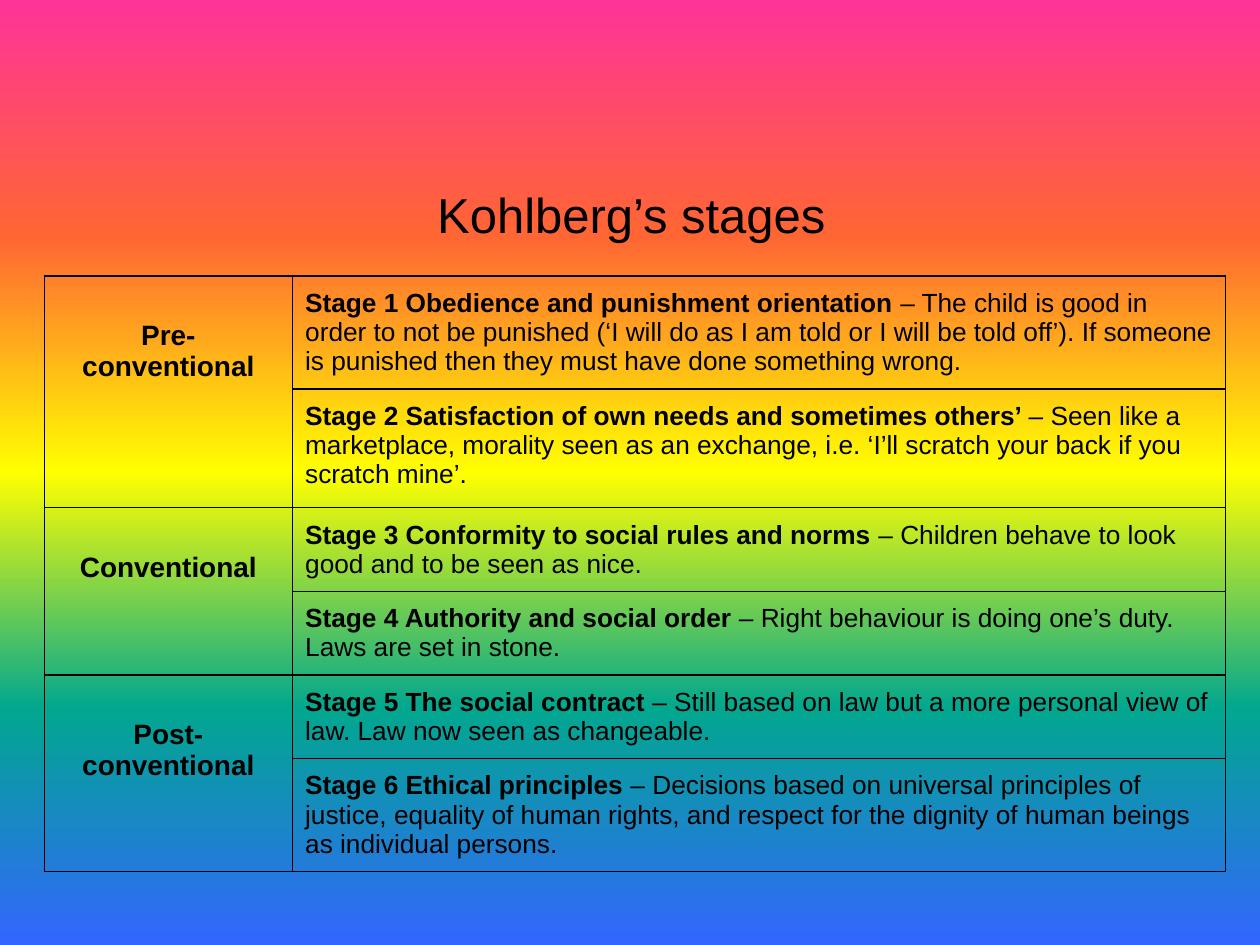
from pptx import Presentation
from pptx.dml.color import RGBColor
from pptx.enum.text import MSO_ANCHOR, MSO_AUTO_SIZE, PP_ALIGN
from pptx.oxml.ns import qn
from pptx.util import Pt
from lxml.etree import SubElement

COLORS = {"ink": "000000", "pink": "FF3399", "orange": "FF6633",
          "yellow": "FFFF00", "green": "01A78F", "blue": "3366FF"}
RAINBOW = ["pink", "orange", "yellow", "green", "blue"]
FONT = "Arial"
PAD = 7.2
COL_WIDTHS = [142, 533]

# Each level has two stages: row height, heading, italic dash, description
LEVELS = [
    ("Pre-conventional", [
        (64.5, "Stage 1 Obedience and punishment orientation ", False,
         "The child is good in order to not be punished (‘I will do as I am told "
         "or I will be told off’). If someone is punished then they must have "
         "done something wrong."),
        (67.5, "Stage 2 Satisfaction of own needs and sometimes others’ ", True,
         "Seen like a marketplace, morality seen as an exchange, i.e. ‘I’ll "
         "scratch your back if you scratch mine’."),
    ]),
    ("Conventional", [
        (47.7, "Stage 3 Conformity to social rules and norms ", False,
         "Children behave to look good and to be seen as nice."),
        (47.7, "Stage 4 Authority and social order ", True,
         "Right behaviour is doing one’s duty. Laws are set in stone."),
    ]),
    ("Post-conventional", [
        (47.7, "Stage 5 The social contract ", False,
         "Still based on law but a more personal view of law. Law now seen as "
         "changeable."),
        (64.5, "Stage 6 Ethical principles ", False,
         "Decisions based on universal principles of justice, equality of human "
         "rights, and respect for the dignity of human beings as individual "
         "persons."),
    ]),
]


def set_attrs(obj, values):
    for name, value in values.items():
        setattr(obj, name, value)


def add_run(p, text, size, **fmt):
    r = p.add_run()
    r.text = text
    set_attrs(r.font, {"name": FONT, "size": Pt(size), **fmt})
    r.font.color.rgb = RGBColor.from_string(COLORS["ink"])


def paint_background(s):
    fill = s.background.fill
    fill.gradient()
    fill.gradient_angle = 270
    stops = s.element.find(".//" + qn("a:gsLst"))
    for old in list(stops):
        stops.remove(old)
    for i, name in enumerate(RAINBOW):
        stop = SubElement(stops, qn("a:gs"), pos=str(i * 25000))
        SubElement(stop, qn("a:srgbClr"), val=COLORS[name])


def add_title(s, left, top, width, height):
    sp = s.shapes.title
    set_attrs(sp, {"left": Pt(left), "top": Pt(top),
                   "width": Pt(width), "height": Pt(height)})
    tf = sp.text_frame
    set_attrs(tf, {"word_wrap": True, "auto_size": MSO_AUTO_SIZE.NONE,
                   "vertical_anchor": MSO_ANCHOR.BOTTOM,
                   "margin_left": Pt(PAD), "margin_right": Pt(PAD),
                   "margin_top": Pt(PAD), "margin_bottom": Pt(PAD)})
    p = tf.paragraphs[0]
    p.alignment = PP_ALIGN.CENTER
    add_run(p, "Kohlberg’s stages", 28, bold=False)


def format_cell(cell, top_line, bottom_line):
    set_attrs(cell, {"margin_left": Pt(PAD), "margin_right": Pt(PAD),
                     "margin_top": Pt(PAD), "margin_bottom": Pt(PAD),
                     "vertical_anchor": MSO_ANCHOR.TOP})
    tc_pr = cell._tc.get_or_add_tcPr()
    widths = {"a:lnL": 0.75, "a:lnR": 0.75, "a:lnT": top_line, "a:lnB": bottom_line}
    for tag, width in widths.items():
        ln = SubElement(tc_pr, qn(tag), w=str(Pt(width)))
        fill = SubElement(ln, qn("a:solidFill"))
        SubElement(fill, qn("a:srgbClr"), val=COLORS["ink"])
    cell.fill.background()


def add_stage_table(s, left, top):
    stages = [stage for _, pair in LEVELS for stage in pair]
    height = sum(stage[0] for stage in stages)
    table = s.shapes.add_table(len(stages), 2, Pt(left), Pt(top),
                               Pt(sum(COL_WIDTHS)), Pt(height)).table
    set_attrs(table, {"first_row": False, "horz_banding": False})
    for col, width in zip(table.columns, COL_WIDTHS):
        col.width = Pt(width)

    # Stage rows, with a heavier line between the two stages of a level
    for i, (row_height, heading, italic, text) in enumerate(stages):
        table.rows[i].height = Pt(row_height)
        lines = (1, 0.75) if i % 2 else (0.75, 1)
        format_cell(table.cell(i, 0), 0.75, 0.75)
        format_cell(table.cell(i, 1), *lines)
        p = table.cell(i, 1).text_frame.paragraphs[0]
        add_run(p, heading, 15, bold=True)
        add_run(p, "– ", 15, bold=False, italic=italic)
        add_run(p, text, 15, bold=False)

    # Level names, each spanning two stages and set one line down
    for i, (level, _) in enumerate(LEVELS):
        cell = table.cell(2 * i, 0)
        cell.merge(table.cell(2 * i + 1, 0))
        cell.margin_top = Pt(PAD + 18)
        p = cell.text_frame.paragraphs[0]
        p.alignment = PP_ALIGN.CENTER
        add_run(p, level, 16, bold=True)


def main():
    prs = Presentation()
    set_attrs(prs, {"slide_width": Pt(720), "slide_height": Pt(540)})
    s = prs.slides.add_slide(prs.slide_layouts[5])
    paint_background(s)
    add_title(s, 36.7, 100, 648, 46)
    add_stage_table(s, 25.2, 157.7)
    prs.save("out.pptx")


if __name__ == "__main__":
    main()
